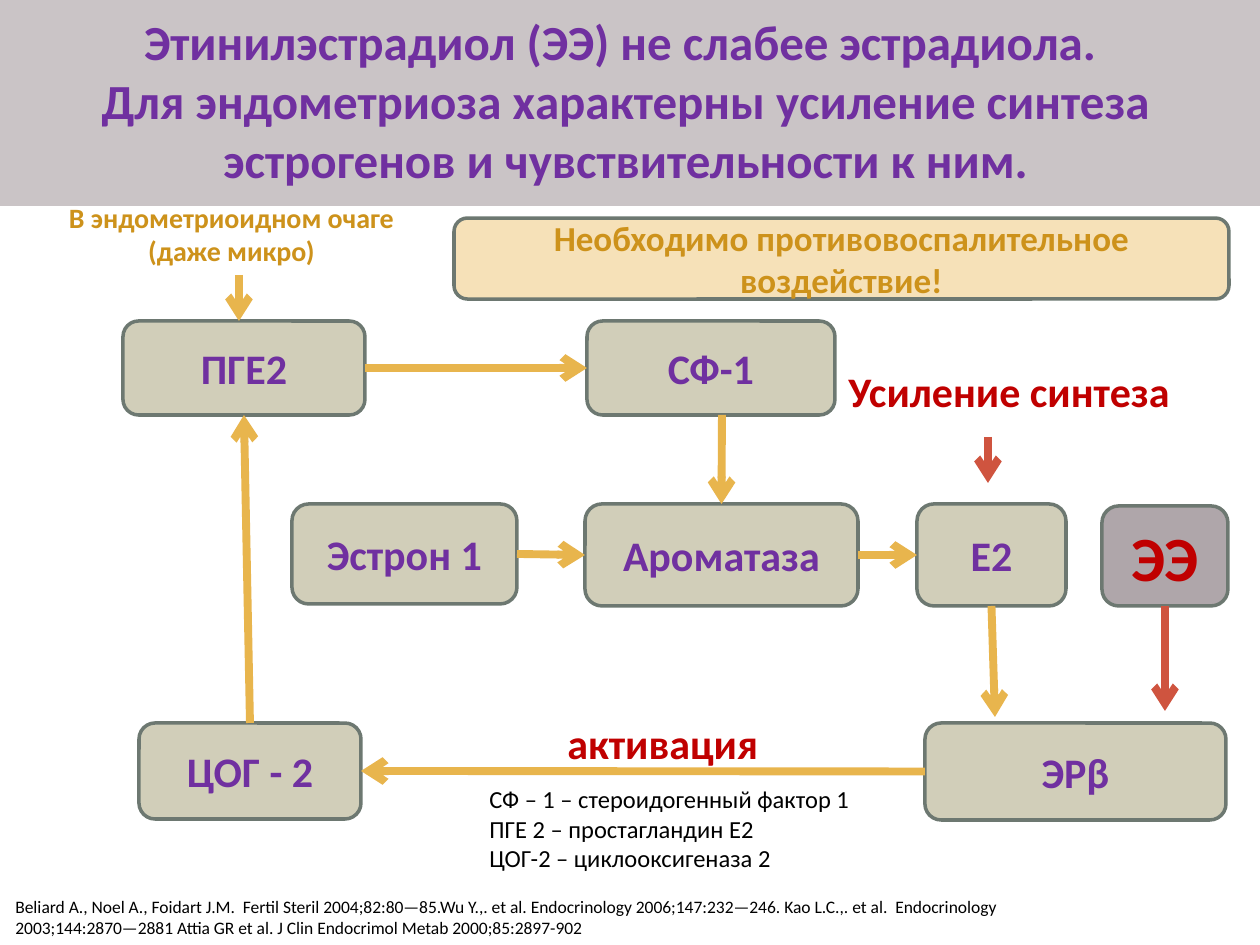
from dataclasses import dataclass
from typing import NamedTuple

from lxml import etree
from pptx import Presentation
from pptx import util as u
from pptx.dml.color import RGBColor
from pptx.enum import shapes, text
from pptx.oxml.ns import qn

PX = 914400 / 126
FONT = "Calibri"
PURPLE, RED, OCHRE, BLACK = "7030A0", "C00000", "CD921B", "000000"
BAND, STONE, BORDER = "CAC4C6", "D1CEB9", "6D7871"
GOLD, BRICK = "E8B54D", "CF543F"
TOP, LEFT, BOTTOM, RIGHT = range(4)


class Area(NamedTuple):
    left: int
    top: int
    width: int
    height: int


class Point(NamedTuple):
    x: int
    y: int


class Side(NamedTuple):
    """The middle of one side of a named box."""
    box: str
    site: int


@dataclass
class Box:
    label: str
    area: Area
    size: int = 24
    color: str = PURPLE
    fill: str = STONE


@dataclass
class Caption:
    lines: list[str]
    area: Area
    size: int
    color: str
    bold: bool = True
    centered: bool = False
    wrap: bool = False
    anchor: text.MSO_ANCHOR = text.MSO_ANCHOR.TOP


@dataclass
class Arrow:
    begin: Point | Side
    end: Point | Side
    color: str = GOLD


BOXES = [
    Box("ПГЕ2", Area(123, 321, 242, 94)),
    Box("СФ-1", Area(587, 321, 248, 94)),
    Box("Ароматаза", Area(585, 504, 273, 102)),
    Box("Эстрон 1", Area(292, 504, 225, 100)),
    Box("Е2", Area(917, 504, 149, 102)),
    Box("ЭРβ", Area(925, 723, 301, 97)),
    Box("ЦОГ - 2", Area(139, 723, 222, 96)),
    Box("ЭЭ", Area(1102, 506, 126, 100), 36, RED, "AFA6AA"),
    Box("Необходимо противовоспалительное воздействие!",
        Area(454, 218, 775, 81), 20, OCHRE, "F6E1B8"),
]

ARROWS = [
    Arrow(Side("ПГЕ2", RIGHT), Side("СФ-1", LEFT)),
    Arrow(Point(722, 415), Side("Ароматаза", TOP)),
    Arrow(Side("Эстрон 1", RIGHT), Side("Ароматаза", LEFT)),
    Arrow(Side("Ароматаза", RIGHT), Side("Е2", LEFT)),
    Arrow(Side("ЭРβ", LEFT), Side("ЦОГ - 2", RIGHT)),
    Arrow(Side("ЦОГ - 2", TOP), Side("ПГЕ2", BOTTOM)),
    Arrow(Side("Е2", BOTTOM), Point(995, 717)),
    Arrow(Point(239, 275), Point(239, 321)),
    Arrow(Point(988, 437), Point(988, 483), BRICK),
    Arrow(Side("ЭЭ", BOTTOM), Point(1165, 711), BRICK),
]

CAPTIONS = [
    Caption(["Этинилэстрадиол (ЭЭ) не слабее эстрадиола. \vДля эндометриоза характерны "
             "усиление синтеза эстрогенов и чувствительности к ним."],
            Area(15, 21, 1221, 158), 28, PURPLE, centered=True, wrap=True,
            anchor=text.MSO_ANCHOR.MIDDLE),
    Caption(["В эндометриоидном очаге (даже микро)"],
            Area(50, 194, 363, 81), 16, OCHRE, centered=True, wrap=True),
    Caption(["Усиление синтеза"], Area(836, 359, 350, 63), 24, RED),
    Caption(["активация"], Area(555, 711, 218, 63), 24, RED),
    Caption(["СФ – 1 – стероидогенный фактор 1",
             "ПГЕ 2 – простагландин Е2",
             "ЦОГ-2 – циклооксигеназа 2"],
            Area(477, 778, 430, 102), 14, BLACK, bold=False),
    Caption(["Beliard A., Noel A., Foidart J.M.  Fertil Steril 2004;82:80—85.Wu Y.,. et al. "
             "Endocrinology 2006;147:232—246. Kao L.C.,. et al.  Endocrinology "
             "2003;144:2870—2881 Attia GR et al. J Clin Endocrimol Metab 2000;85:2897-902"],
            Area(3, 890, 1027, 55), 10, BLACK, bold=False, wrap=True),
]


def px(length: int) -> u.Emu:
    return u.Emu(round(length * PX))


def rgb(color: str) -> RGBColor:
    return RGBColor.from_string(color)


def write(frame, lines: list[str], size: int, color: str, bold: bool, centered: bool) -> None:
    frame.text = "\n".join(lines)
    for paragraph in frame.paragraphs:
        paragraph.alignment = text.PP_ALIGN.CENTER if centered else text.PP_ALIGN.LEFT
        font = paragraph.font
        font.name, font.size, font.bold = FONT, u.Pt(size), bold
        font.color.rgb = rgb(color)


def add_panel(slide, kind: shapes.MSO_SHAPE, area: Area, fill: str, border: str):
    panel = slide.shapes.add_shape(kind, *map(px, area))
    panel.shadow.inherit = False
    panel.fill.solid()
    panel.fill.fore_color.rgb = rgb(fill)
    panel.line.color.rgb = rgb(border)
    panel.line.width = u.Pt(2)
    return panel


def add_box(slide, box: Box):
    panel = add_panel(slide, shapes.MSO_SHAPE.ROUNDED_RECTANGLE, box.area, box.fill, BORDER)
    panel.text_frame.word_wrap = True
    panel.text_frame.vertical_anchor = text.MSO_ANCHOR.MIDDLE
    write(panel.text_frame, [box.label], box.size, box.color, bold=True, centered=True)
    return panel


def add_caption(slide, caption: Caption) -> None:
    frame = slide.shapes.add_textbox(*map(px, caption.area)).text_frame
    frame.word_wrap = caption.wrap
    frame.vertical_anchor = caption.anchor
    write(frame, caption.lines, caption.size, caption.color, caption.bold, caption.centered)


def add_arrow(slide, arrow: Arrow, panels: dict) -> None:
    """Draw an arrow, joining each end that is given as a box side."""
    places = [end if isinstance(end, Point) else Point(0, 0) for end in (arrow.begin, arrow.end)]
    line = slide.shapes.add_connector(
        shapes.MSO_CONNECTOR.STRAIGHT, *(px(value) for place in places for value in place))
    if isinstance(arrow.begin, Side):
        line.begin_connect(panels[arrow.begin.box], arrow.begin.site)
    if isinstance(arrow.end, Side):
        line.end_connect(panels[arrow.end.box], arrow.end.site)
    line.line.color.rgb = rgb(arrow.color)
    line.line.width = u.Pt(4.5)
    etree.SubElement(line.line._get_or_add_ln(), qn("a:tailEnd"), type="arrow")
    etree.SubElement(line._element.spPr, qn("a:effectLst"))


def main() -> None:
    deck = Presentation()
    deck.slide_width, deck.slide_height = u.Inches(10), u.Inches(7.5)
    slide = deck.slides.add_slide(deck.slide_layouts[6])
    add_panel(slide, shapes.MSO_SHAPE.RECTANGLE, Area(0, 0, 1260, 204), BAND, BAND)
    panels = {box.label: add_box(slide, box) for box in BOXES}
    for arrow in ARROWS:
        add_arrow(slide, arrow, panels)
    for caption in CAPTIONS:
        add_caption(slide, caption)
    deck.save("out.pptx")


if __name__ == "__main__":
    main()
